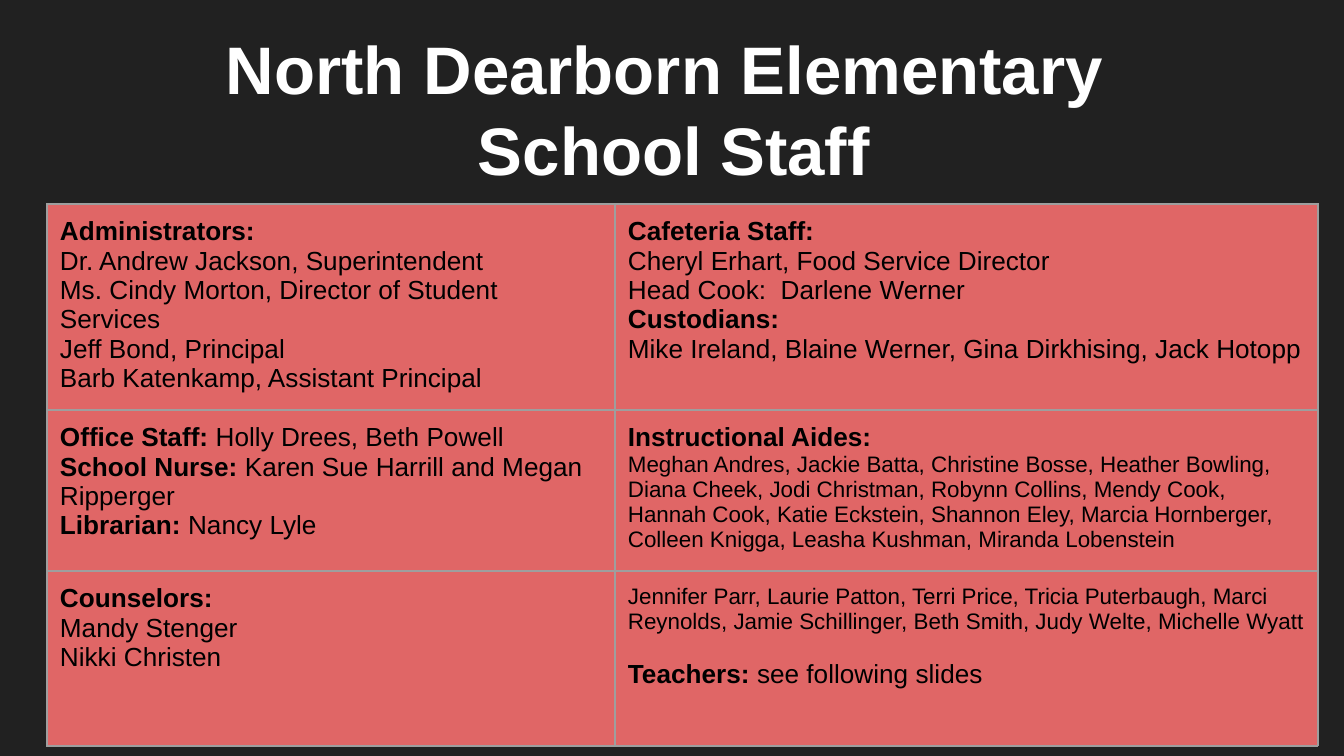
from dataclasses import dataclass

from lxml.etree import SubElement
from pptx import Presentation
from pptx.dml.color import RGBColor
from pptx.enum.text import MSO_ANCHOR as Anchor, MSO_AUTO_SIZE as AutoSize, PP_ALIGN as Align
from pptx.oxml.ns import qn
from pptx.util import Emu, Pt

EMU_PER_PX = 914400 / 134.4
FONT = "Arial"
BACKGROUND = "212121"
CELL_FILL = "E06666"
BORDER = "9E9E9E"
WHITE = "FFFFFF"
BLACK = "000000"
INSET = 13
COLUMN_WIDTHS = [568, 703]
ROW_HEIGHTS = [206, 161, 175]


@dataclass(frozen=True)
class Line:
    label: str = ""
    detail: str = ""
    size: int = 14
    space_before: int = 0


STAFF = [
    [
        [
            Line("Administrators:"),
            Line(detail="Dr. Andrew Jackson, Superintendent"),
            Line(detail="Ms. Cindy Morton, Director of Student Services"),
            Line(detail="Jeff Bond, Principal"),
            Line(detail="Barb Katenkamp, Assistant Principal"),
        ],
        [
            Line("Cafeteria Staff:"),
            Line(detail="Cheryl Erhart, Food Service Director"),
            Line(detail="Head Cook:  Darlene Werner"),
            Line("Custodians:"),
            Line(detail="Mike Ireland, Blaine Werner, Gina Dirkhising, Jack Hotopp"),
        ],
    ],
    [
        [
            Line("Office Staff: ", "Holly Drees, Beth Powell"),
            Line("School Nurse: ", "Karen Sue Harrill and Megan"),
            Line(detail="Ripperger"),
            Line("Librarian:", " Nancy Lyle"),
        ],
        [
            Line("Instructional Aides:"),
            Line(
                detail="Meghan Andres, Jackie Batta, Christine Bosse, Heather Bowling, "
                "Diana Cheek, Jodi Christman, Robynn Collins, Mendy Cook, "
                "Hannah Cook, Katie Eckstein, Shannon Eley, Marcia Hornberger, "
                "Colleen Knigga, Leasha Kushman, Miranda Lobenstein",
                size=12,
            ),
        ],
    ],
    [
        [
            Line("Counselors:"),
            Line(detail="Mandy Stenger"),
            Line(detail="Nikki Christen"),
        ],
        [
            Line(
                detail="Jennifer Parr, Laurie Patton, Terri Price, Tricia Puterbaugh, "
                "Marci Reynolds, Jamie Schillinger, Beth Smith, Judy Welte, "
                "Michelle Wyatt",
                size=12,
            ),
            Line("Teachers:", " see following slides", space_before=14),
        ],
    ],
]


def px(length: int) -> Emu:
    return Emu(round(length * EMU_PER_PX))


def color(value: str) -> RGBColor:
    return RGBColor.from_string(value)


def add_text(paragraph, text: str, *, size: int, fill: str = BLACK, bold: bool = False) -> None:
    run = paragraph.add_run()
    run.text = text
    run.font.name = FONT
    run.font.size = Pt(size)
    run.font.bold = bold
    run.font.color.rgb = color(fill)


def set_insets(target) -> None:
    target.margin_left = target.margin_right = px(INSET)
    target.margin_top = target.margin_bottom = px(INSET)


def add_title(slide) -> None:
    title = slide.shapes.title
    title.left, title.top, title.width, title.height = px(67), px(15), px(1214), px(160)
    frame = title.text_frame
    frame.word_wrap = True
    frame.auto_size = AutoSize.NONE
    frame.vertical_anchor = Anchor.TOP
    set_insets(frame)
    for index, text in enumerate(["North Dearborn Elementary ", "School Staff"]):
        paragraph = frame.add_paragraph() if index else frame.paragraphs[0]
        paragraph.alignment = Align.CENTER
        paragraph.line_spacing = Pt(43)
        paragraph.space_before = Pt(0)
        add_text(paragraph, text, size=36, fill=WHITE, bold=True)


def add_borders(cell) -> None:
    properties = cell._tc.get_or_add_tcPr()
    for position, side in enumerate(["lnL", "lnR", "lnT", "lnB"]):
        border = SubElement(properties, qn(f"a:{side}"), w=str(Pt(0.75)))
        solid = SubElement(border, qn("a:solidFill"))
        SubElement(solid, qn("a:srgbClr"), val=BORDER)
        properties.remove(border)
        properties.insert(position, border)


def fill_cell(cell, lines: list[Line]) -> None:
    cell.fill.solid()
    cell.fill.fore_color.rgb = color(CELL_FILL)
    cell.vertical_anchor = Anchor.TOP
    set_insets(cell)
    add_borders(cell)
    for index, line in enumerate(lines):
        paragraph = cell.text_frame.add_paragraph() if index else cell.text_frame.paragraphs[0]
        paragraph.space_before = Pt(line.space_before)
        if line.label:
            add_text(paragraph, line.label, size=line.size, bold=True)
        if line.detail:
            add_text(paragraph, line.detail, size=line.size)


def add_staff_table(slide) -> None:
    table = slide.shapes.add_table(
        len(ROW_HEIGHTS), len(COLUMN_WIDTHS),
        px(47), px(204), px(sum(COLUMN_WIDTHS)), px(sum(ROW_HEIGHTS)),
    ).table
    table.first_row = table.horz_banding = False
    for column, width in zip(table.columns, COLUMN_WIDTHS):
        column.width = px(width)
    for row, height, groups in zip(table.rows, ROW_HEIGHTS, STAFF):
        row.height = px(height)
        for cell, lines in zip(row.cells, groups):
            fill_cell(cell, lines)


def main() -> None:
    presentation = Presentation()
    presentation.slide_width, presentation.slide_height = px(1344), px(756)
    slide = presentation.slides.add_slide(presentation.slide_layouts[5])
    slide.background.fill.solid()
    slide.background.fill.fore_color.rgb = color(BACKGROUND)
    add_title(slide)
    add_staff_table(slide)
    presentation.save("out.pptx")


if __name__ == "__main__":
    main()
